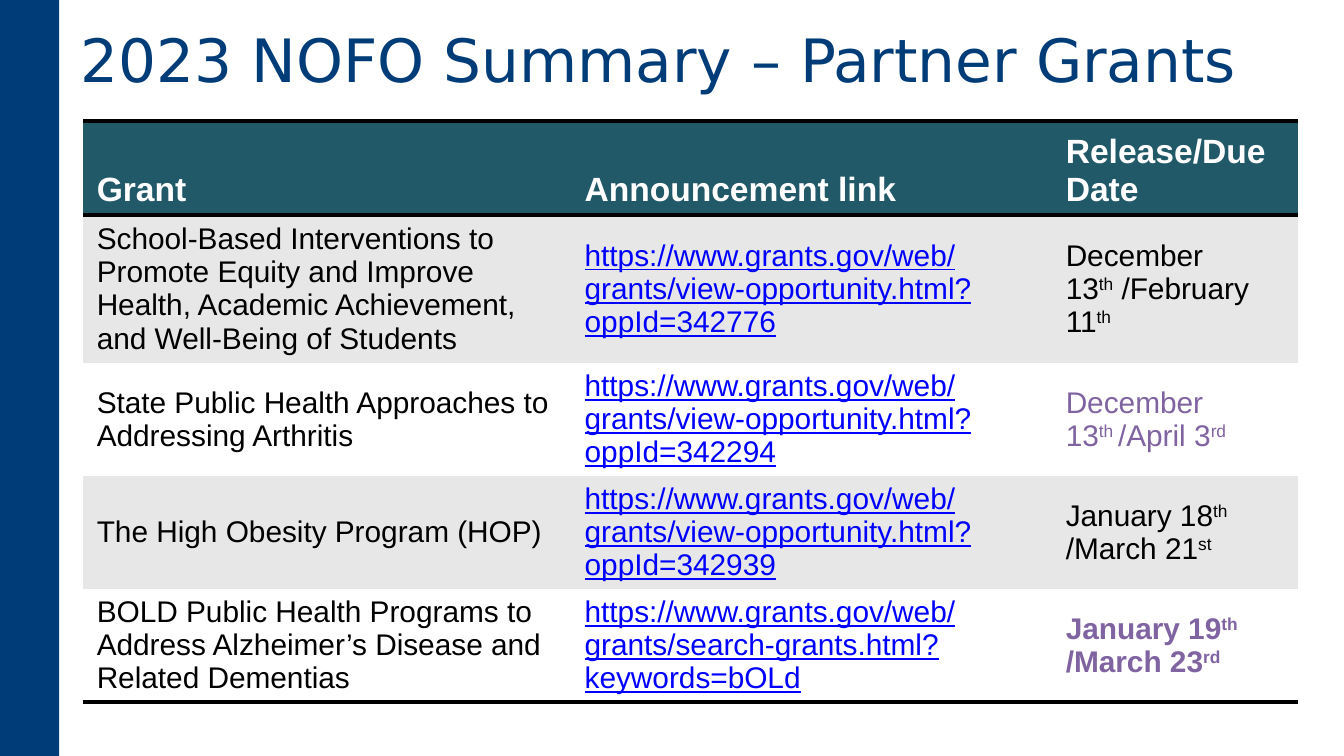
from dataclasses import dataclass

from lxml.etree import SubElement
from pptx import Presentation
from pptx.dml.color import RGBColor
from pptx.enum.shapes import MSO_SHAPE
from pptx.enum.text import MSO_ANCHOR, PP_ALIGN
from pptx.oxml.ns import qn
from pptx.slide import Slide
from pptx.table import Table, _Cell
from pptx.util import Inches, Pt


@dataclass(frozen=True)
class Theme:
    navy: str = "003D78"
    teal: str = "215968"
    band: str = "E7E7E7"
    white: str = "FFFFFF"
    black: str = "000000"
    link: str = "0000FF"
    purple: str = "8064A2"
    title_font: str = "DejaVu Sans"
    body_font: str = "Arial"
    title_size: int = 32
    header_size: int = 18
    body_size: int = 16
    rule_width: int = 2


THEME = Theme()
NO_TABLE_STYLE = "{2D5ABB26-0587-4C30-8999-92F81FD0307C}"


@dataclass(frozen=True)
class Grant:
    name: str
    link: str
    dates: str  # carets enclose superscripts
    date_color: str = THEME.black
    date_bold: bool = False


SITE = "https://www.grants.gov/web/grants/"
OPPORTUNITY = SITE + "view-opportunity.html?oppId="
HEADINGS = ("Grant", "Announcement link", "Release/Due Date")
GRANTS = (
    Grant("School-Based Interventions to Promote Equity and Improve Health, "
          "Academic Achievement, and Well-Being of Students",
          OPPORTUNITY + "342776", "December 13^th^ /February 11^th^"),
    Grant("State Public Health Approaches to Addressing Arthritis",
          OPPORTUNITY + "342294", "December 13^th ^/April 3^rd^", THEME.purple),
    Grant("The High Obesity Program (HOP)",
          OPPORTUNITY + "342939", "January 18^th ^/March 21^st^"),
    Grant("BOLD Public Health Programs to Address Alzheimer’s Disease and "
          "Related Dementias",
          SITE + "search-grants.html?keywords=bOLd",
          "January 19^th^ /March 23^rd^", THEME.purple, True),
)
COLUMN_WIDTHS = (3.63, 3.58, 1.83)
ROW_HEIGHTS = (0.7, 1.1, 0.83, 0.83, 0.83)


def rgb(color: str) -> RGBColor:
    return RGBColor.from_string(color)


def write_cell(cell: _Cell, text: str, color: str, size: int = THEME.body_size,
               bold: bool = False, underline: bool = False,
               anchor: MSO_ANCHOR = MSO_ANCHOR.MIDDLE) -> None:
    """Fill a cell with text, raising the parts between carets."""
    cell.vertical_anchor = anchor
    paragraph = cell.text_frame.paragraphs[0]
    for index, part in enumerate(text.split("^")):
        if not part:
            continue
        run = paragraph.add_run()
        run.text = part
        font = run.font
        font.name, font.size = THEME.body_font, Pt(size)
        font.bold, font.underline = bold, underline
        font.color.rgb = rgb(color)
        if index % 2:
            run._r.get_or_add_rPr().set("baseline", "30000")


def add_rule(cell: _Cell, edge: str) -> None:
    """Draw a black border on one edge; call before filling the cell."""
    line = SubElement(cell._tc.get_or_add_tcPr(), qn(f"a:{edge}"),
                      w=str(Pt(THEME.rule_width)))
    fill = SubElement(line, qn("a:solidFill"))
    SubElement(fill, qn("a:srgbClr"), val=THEME.black)


def style_row(table: Table, row: int, fill: str, edges: tuple[str, ...]) -> None:
    for cell in table.rows[row].cells:
        for edge in edges:
            add_rule(cell, edge)
        cell.fill.solid()
        cell.fill.fore_color.rgb = rgb(fill)


def add_side_bar(slide: Slide) -> None:
    bar = slide.shapes.add_shape(MSO_SHAPE.RECTANGLE, Inches(-0.06),
                                 Inches(-0.09), Inches(0.5), Inches(5.81))
    bar.shadow.inherit = False
    bar.fill.solid()
    bar.fill.fore_color.rgb = rgb(THEME.navy)
    bar.line.fill.background()


def set_title(slide: Slide, text: str) -> None:
    title = slide.shapes.title
    title.left, title.top = Inches(0.5), Inches(0.11)
    title.width, title.height = Inches(9.5), Inches(0.66)
    frame = title.text_frame
    frame.text = text
    frame.vertical_anchor = MSO_ANCHOR.MIDDLE
    paragraph = frame.paragraphs[0]
    paragraph.alignment = PP_ALIGN.LEFT
    font = paragraph.runs[0].font
    font.name, font.size = THEME.title_font, Pt(THEME.title_size)
    font.color.rgb = rgb(THEME.navy)


def add_grant_table(slide: Slide) -> None:
    frame = slide.shapes.add_table(
        len(ROW_HEIGHTS), len(COLUMN_WIDTHS), Inches(0.62), Inches(0.9),
        Inches(sum(COLUMN_WIDTHS)), Inches(sum(ROW_HEIGHTS)))
    table = frame.table
    table.first_row = table.horz_banding = False
    table._tbl.tblPr.find(qn("a:tableStyleId")).text = NO_TABLE_STYLE
    for column, width in zip(table.columns, COLUMN_WIDTHS):
        column.width = Inches(width)
    for row, height in zip(table.rows, ROW_HEIGHTS):
        row.height = Inches(height)

    # Header
    style_row(table, 0, THEME.teal, ("lnT", "lnB"))
    for column, heading in enumerate(HEADINGS):
        write_cell(table.cell(0, column), heading, THEME.white,
                   THEME.header_size, bold=True, anchor=MSO_ANCHOR.BOTTOM)

    # Grants, on alternating bands
    for row, grant in enumerate(GRANTS, start=1):
        style_row(table, row, THEME.band if row % 2 else THEME.white,
                  ("lnB",) if row == len(GRANTS) else ())
        write_cell(table.cell(row, 0), grant.name, THEME.black)
        write_cell(table.cell(row, 1), grant.link, THEME.link, underline=True)
        write_cell(table.cell(row, 2), grant.dates, grant.date_color,
                   bold=grant.date_bold)


def main() -> None:
    deck = Presentation()
    # Widescreen, 16:9
    deck.slide_width, deck.slide_height = Inches(10), Inches(10 * 9 / 16)
    slide = deck.slides.add_slide(deck.slide_layouts[5])
    add_side_bar(slide)
    set_title(slide, "2023 NOFO Summary – Partner Grants")
    add_grant_table(slide)
    deck.save("out.pptx")


if __name__ == "__main__":
    main()
